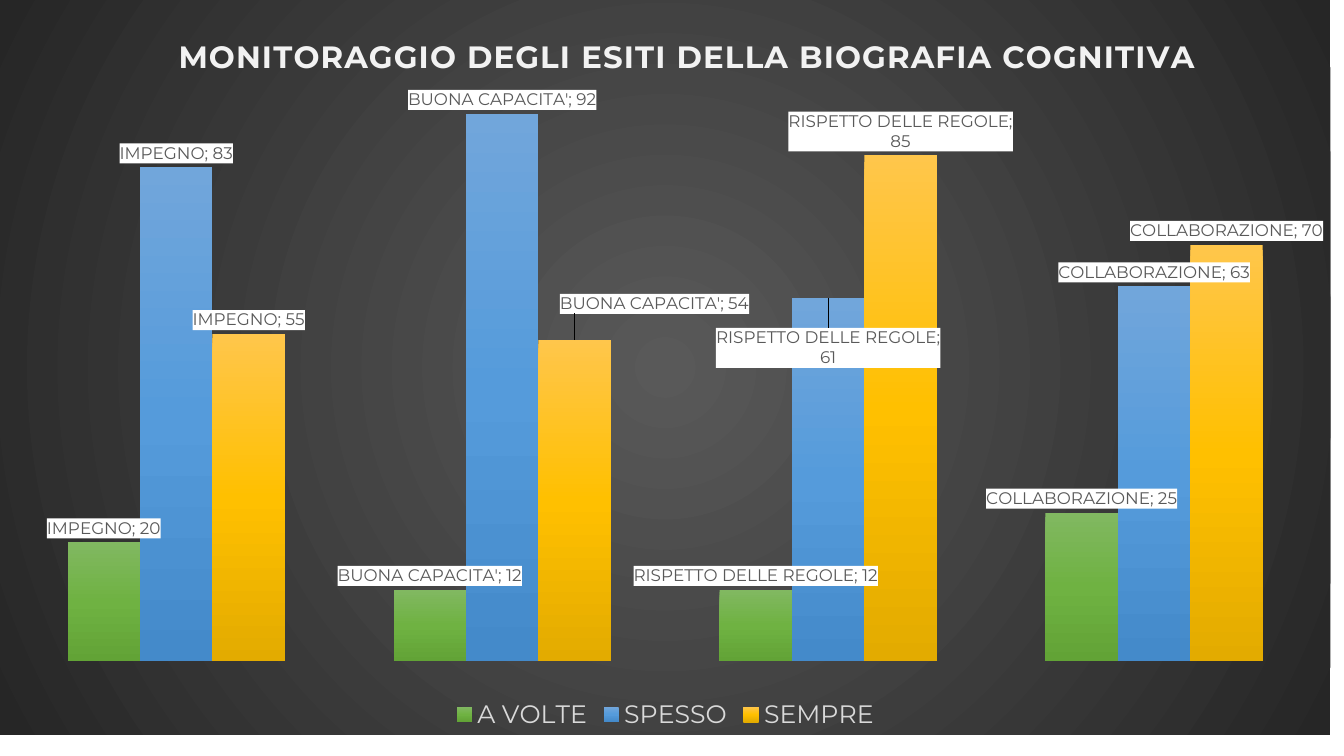
from copy import deepcopy

from pptx import Presentation
from pptx.chart.data import CategoryChartData
from pptx.dml.color import RGBColor
from pptx.enum.chart import XL_CHART_TYPE as ChartType
from pptx.enum.chart import XL_LABEL_POSITION as LabelPosition
from pptx.enum.chart import XL_LEGEND_POSITION as LegendPosition
from pptx.oxml import parse_xml
from pptx.oxml.ns import nsdecls, qn
from pptx.util import Cm, Pt

FONT = "Montserrat"
TITLE = "MONITORAGGIO DEGLI ESITI DELLA BIOGRAFIA COGNITIVA"
TITLE_COLOR = RGBColor(0xF2, 0xF2, 0xF2)
LEGEND_COLOR = RGBColor(0xD9, 0xD9, 0xD9)
LABEL_COLOR = RGBColor(0x59, 0x59, 0x59)
LABEL_FILL = RGBColor(0xFF, 0xFF, 0xFF)
BACKGROUND = (RGBColor(0x59, 0x59, 0x59), RGBColor(0x26, 0x26, 0x26))
GREEN = (RGBColor(0x81, 0xB8, 0x61), RGBColor(0x6F, 0xB2, 0x42), RGBColor(0x62, 0xA3, 0x36))
BLUE = (RGBColor(0x71, 0xA6, 0xDB), RGBColor(0x55, 0x9B, 0xDB), RGBColor(0x44, 0x8A, 0xCA))
YELLOW = (RGBColor(0xFF, 0xC6, 0x4B), RGBColor(0xFF, 0xC0, 0x00), RGBColor(0xE3, 0xAB, 0x00))

CATEGORIES = ["IMPEGNO", "BUONA CAPACITA'", "RISPETTO DELLE REGOLE", "COLLABORAZIONE"]
SERIES = [
    ("A VOLTE", (20, 12, 12, 25), GREEN, {}),
    ("SPESSO", (83, 92, 61, 63), BLUE, {2: (0, 0.1)}),
    ("SEMPRE", (55, 54, 85, 70), YELLOW, {1: (0.06, -0.03)}),
]
LINEAR = '<a:lin ang="5400000" scaled="0"/>'
RADIAL = '<a:path path="circle"><a:fillToRect l="50000" t="50000" r="50000" b="50000"/></a:path>'


def gradient_fill(colors, direction):
    """Return a gradient fill with evenly spaced stops."""
    step = 100000 // (len(colors) - 1)
    stops = "".join(
        f'<a:gs pos="{index * step}"><a:srgbClr val="{color}"/></a:gs>'
        for index, color in enumerate(colors)
    )
    return parse_xml(
        f'<a:gradFill {nsdecls("a")} rotWithShape="1"><a:gsLst>{stops}</a:gsLst>{direction}</a:gradFill>'
    )


def shape_properties(fill_xml):
    """Return chart shape properties with the given fill and no line."""
    properties = parse_xml(
        f'<c:spPr {nsdecls("c", "a")}><a:ln><a:noFill/></a:ln></c:spPr>'
    )
    properties.insert(0, fill_xml)
    return properties


def set_layout(parent, index, settings):
    """Replace the manual layout of a chart part."""
    for layout in parent.findall(qn("c:layout")):
        parent.remove(layout)
    items = "".join(f'<c:{name} val="{value}"/>' for name, value in settings.items())
    parent.insert(index, parse_xml(
        f'<c:layout {nsdecls("c")}><c:manualLayout>{items}</c:manualLayout></c:layout>'
    ))


def format_font(font, size, color):
    """Apply the slide typeface with a size and colour."""
    font.name = FONT
    font.size = Pt(size)
    font.color.rgb = color


def add_labels(series, offsets):
    """Label each column with category and value, shifting chosen labels."""
    labels = series.data_labels
    labels.show_value = True
    labels.show_category_name = True
    labels.position = LabelPosition.OUTSIDE_END
    format_font(labels.font, 12, LABEL_COLOR)
    element = labels._element
    white = parse_xml(
        f'<a:solidFill {nsdecls("a")}><a:srgbClr val="{LABEL_FILL}"/></a:solidFill>'
    )
    element.find(qn("c:txPr")).addprevious(shape_properties(white))
    for leader in element.findall(qn("c:showLeaderLines")):
        element.remove(leader)
    element.append(parse_xml(f'<c:separator {nsdecls("c")}>; </c:separator>'))
    shared = list(element)
    for index, (x, y) in offsets.items():
        label = parse_xml(f'<c:dLbl {nsdecls("c")}><c:idx val="{index}"/></c:dLbl>')
        set_layout(label, 1, {"x": x, "y": y})
        label.extend(deepcopy(child) for child in shared)
        element.insert(0, label)


def add_title(chart):
    """Write the bold, letter-spaced chart title."""
    title = chart.chart_title
    paragraph = title.text_frame.paragraphs[0]
    run = paragraph.add_run()
    run.text = TITLE
    format_font(run.font, 22, TITLE_COLOR)
    run.font.bold = True
    run._r.get_or_add_rPr().set("spc", "100")
    set_layout(title._element, 1, {"xMode": "edge", "yMode": "edge", "x": 0.13, "y": 0.04})


def add_results_chart(slide, left, top, width, height):
    """Place the clustered column chart in the given box."""
    data = CategoryChartData()
    data.categories = CATEGORIES
    for name, values, _, _ in SERIES:
        data.add_series(name, values)
    chart = slide.shapes.add_chart(
        ChartType.COLUMN_CLUSTERED, left, top, width, height, data
    ).chart
    chart.font.name = "Calibri"
    chart.font.size = Pt(10)
    background = shape_properties(gradient_fill(BACKGROUND, RADIAL))
    chart._chartSpace.find(qn("c:txPr")).addprevious(background)
    add_title(chart)

    chart.has_legend = True
    chart.legend.position = LegendPosition.BOTTOM
    chart.legend.include_in_layout = False
    format_font(chart.legend.font, 18, LEGEND_COLOR)

    chart.category_axis.visible = False
    chart.value_axis.visible = False
    chart.value_axis.has_major_gridlines = False
    chart.value_axis.minimum_scale = 0
    chart.value_axis.maximum_scale = 100
    set_layout(chart._chartSpace.chart.plotArea, 0, {
        "layoutTarget": "inner", "xMode": "edge", "yMode": "edge",
        "x": 0.01, "y": 0.09, "w": 0.98, "h": 0.81,
    })

    plot = chart.plots[0]
    plot.gap_width = 150
    plot.overlap = 0
    plot.vary_by_categories = False
    for series, (_, _, colors, offsets) in zip(plot.series, SERIES):
        series.format.line.fill.background()
        series._element.get_or_add_spPr().insert(0, gradient_fill(colors, LINEAR))
        add_labels(series, offsets)


def main():
    """Build and save the one-slide presentation."""
    presentation = Presentation()
    presentation.slide_width = Cm(33.87)
    presentation.slide_height = Cm(19.05)
    slide = presentation.slides.add_slide(presentation.slide_layouts[6])
    add_results_chart(slide, Cm(0), Cm(0), Cm(33.53), Cm(18.52))
    presentation.save("out.pptx")


if __name__ == "__main__":
    main()
